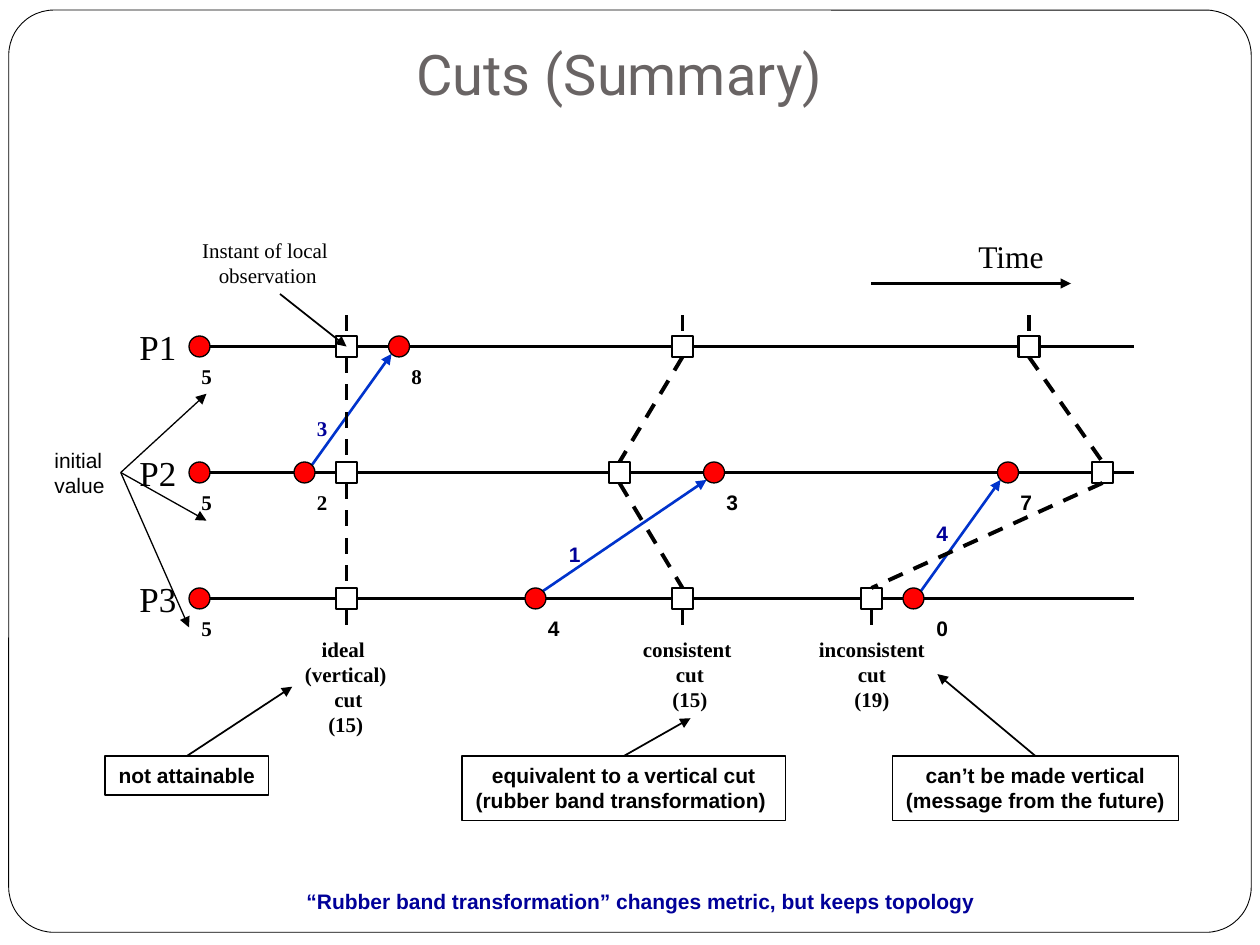
from dataclasses import dataclass
from typing import NamedTuple

from lxml.etree import SubElement
from pptx import Presentation
from pptx.dml.color import RGBColor
from pptx.enum.dml import MSO_LINE_DASH_STYLE as Dash
from pptx.enum.shapes import MSO_CONNECTOR as Connector, MSO_SHAPE as Preset
from pptx.enum.text import MSO_ANCHOR as Anchor, MSO_AUTO_SIZE as AutoSize, PP_ALIGN as Align
from pptx.oxml.ns import qn
from pptx.util import Pt


class Box(NamedTuple):
    left: float
    top: float
    width: float
    height: float


@dataclass(frozen=True)
class Theme:
    ink: RGBColor = RGBColor(0, 0, 0)
    paper: RGBColor = RGBColor(255, 255, 255)
    event: RGBColor = RGBColor(255, 0, 0)
    message: RGBColor = RGBColor(0x00, 0x33, 0xCC)
    accent: RGBColor = RGBColor(0x00, 0x00, 0x99)
    title: RGBColor = RGBColor(0x69, 0x64, 0x64)
    title_font: str = "Roboto"
    serif: str = "Times New Roman"
    sans: str = "Arial"
    title_size: int = 32
    process_size: int = 20
    time_size: int = 18
    body_size: int = 12


THEME = Theme()
MARK = 12
ROW_GAP = 72
FIRST_ROW = 18
GRIP = 4.24  # offset from an event's centre to its edge along the diagonal


def write(shape, text, font, size=THEME.body_size, color=THEME.ink, bold=False, align=Align.LEFT):
    frame = shape.text_frame
    frame.text = text
    for paragraph in frame.paragraphs:
        paragraph.alignment = align
        paragraph.font.name = font
        paragraph.font.size = Pt(size)
        paragraph.font.bold = bold
        paragraph.font.color.rgb = color
    return frame


def add_label(slide, box, text, font=THEME.sans, **style):
    shape = slide.shapes.add_textbox(*map(Pt, box))
    frame = write(shape, text, font, **style)
    frame.word_wrap = False
    frame.auto_size = AutoSize.SHAPE_TO_FIT_TEXT


def add_outline(slide, preset, box, fill=None, width=0.75):
    shape = slide.shapes.add_shape(preset, *map(Pt, box))
    shape.shadow.inherit = False
    if fill is None:
        shape.fill.background()
    else:
        shape.fill.solid()
        shape.fill.fore_color.rgb = fill
    shape.line.color.rgb = THEME.ink
    shape.line.width = Pt(width)
    return shape


def add_line(slide, start, end, width, color=THEME.ink, arrow=False, dashed=False):
    line = slide.shapes.add_connector(Connector.STRAIGHT, *map(Pt, (*start, *end)))
    line.line.color.rgb = color
    line.line.width = Pt(width)
    if dashed:
        line.line.dash_style = Dash.DASH
    if arrow:
        SubElement(line.line._get_or_add_ln(), qn("a:tailEnd"), type="triangle")
    SubElement(line._element.spPr, qn("a:effectLst"))
    return line


def add_mark(slide, preset, center, fill, width):
    x, y = center
    return add_outline(slide, preset, Box(x - MARK / 2, y - MARK / 2, MARK, MARK), fill, width)


def add_frame_and_title(slide, box):
    title = slide.shapes.title
    frame = add_outline(slide, Preset.ROUNDED_RECTANGLE, box, THEME.paper, 0.5)
    frame.adjustments[0] = 0.049
    title._element.addprevious(frame._element)
    title.left, title.top = Pt(box.left + 25), Pt(box.top + 12.24)
    title.width, title.height = Pt(648), Pt(50.4)
    text_frame = write(title, "Cuts (Summary)", THEME.title_font, THEME.title_size,
                       THEME.title, align=Align.CENTER)
    text_frame.vertical_anchor = Anchor.BOTTOM
    text_frame.auto_size = AutoSize.NONE
    text_frame.margin_left = text_frame.margin_right = text_frame.margin_bottom = Pt(7.2)
    text_frame.margin_top = Pt(3.6)


def add_cut(slide, box, centers):
    """Draw a dashed cut from the top to the bottom of the box through one square per process."""
    squares = [add_mark(slide, Preset.RECTANGLE, center, THEME.paper, 1.5) for center in centers]
    stops = [(centers[0][0], box.top), *centers, (centers[-1][0], box.top + box.height)]
    ends = [None, *squares, None]
    for start, end, above, below in zip(stops, stops[1:], ends, ends[1:]):
        line = add_line(slide, start, end, 2.25, dashed=True)
        if above is not None:
            line.begin_connect(above, 2)
        if below is not None:
            line.end_connect(below, 0)


def add_timelines(slide, box):
    def point(x, row):
        return box.left + x, box.top + FIRST_ROW + row * ROW_GAP

    for row in range(3):
        x, y = point(0, row)
        add_line(slide, (x, y), (x + box.width, y), 1.5)
        add_label(slide, Box(x - 35.5, y - 15.8, 37, 31), f"P{row + 1}",
                  THEME.serif, size=THEME.process_size)

    # x and row of sender, x and row of receiver, message value, its place, font
    messages = [((66, 1), (120, 0), "3", (66, 54), THEME.serif),
                ((198, 2), (300, 1), "1", (210, 126), THEME.sans),
                ((414, 2), (468, 1), "4", (420, 114), THEME.sans)]
    for sender, receiver, value, (x, y), font in messages:
        (x1, y1), (x2, y2) = point(*sender), point(*receiver)
        add_line(slide, (x1 + GRIP, y1 - GRIP), (x2 - GRIP, y2 + GRIP), 1.5,
                 THEME.message, arrow=True)
        add_label(slide, Box(box.left + x, box.top + y, 20.8, 21.6), value, font,
                  color=THEME.accent, bold=True)

    for xs in [(90, 90, 90), (282, 246, 282), (480, 522, 390)]:
        add_cut(slide, box, [point(x, row) for row, x in enumerate(xs)])

    # x and row of event, left of its value, value, font
    events = [(6, row, 0, "5", THEME.serif) for row in range(3)]
    events += [(66, 1, 66, "2", THEME.serif), (120, 0, 120, "8", THEME.serif),
               (198, 2, 198, "4", THEME.sans), (300, 1, 300, "3", THEME.sans),
               (414, 2, 420, "0", THEME.sans), (468, 1, 468, "7", THEME.sans)]
    for x, row, left, value, font in events:
        center = point(x, row)
        add_mark(slide, Preset.OVAL, center, THEME.event, 0.75)
        add_label(slide, Box(box.left + left, center[1] + 6, 20.8, 21.6), value, font, bold=True)


def add_time_arrow(slide, box):
    bottom = box.top + box.height
    add_label(slide, Box(box.left + 54, box.top, 52.6, 29), "Time", THEME.serif,
              size=THEME.time_size)
    add_line(slide, (box.left, bottom), (box.left + box.width, bottom), 1.5, arrow=True)


def add_observation_note(slide, box):
    add_label(slide, box, "Instant of local \nobservation", THEME.serif, align=Align.CENTER)
    bottom = box.top + box.height
    add_line(slide, (box.left + 52, bottom), (box.left + box.width, bottom + 30), 1, arrow=True)


def add_initial_value_note(slide, box):
    add_label(slide, box, "initial\nvalue")
    start = box.left + box.width, box.top + box.height / 2
    for dx, dy in [(49, 27.5), (39, 88.5), (49, -45)]:
        add_line(slide, start, (start[0] + dx, start[1] + dy), 0.75, arrow=True)


def add_cut_remarks(slide, box):
    # cut name, its left, width and height; remark, its left, width and height; arrow tip
    remarks = [
        ("ideal \n(vertical)\n cut\n(15)", (107, 61.2, 64.8),
         "not attainable", (0, 93.6, 22.3), (107, 32.4)),
        ("consistent \ncut\n(15)", (300, 68.4, 50.4),
         "equivalent to a vertical cut\n(rubber band transformation) ", (204, 185, 36.7),
         (334.6, 50.4)),
        ("inconsistent\ncut\n(19)", (400.8, 74.9, 50.4),
         "can’t be made vertical\n(message from the future)", (450, 163.4, 36.7),
         (475.7, 25.2)),
    ]
    for name, (x, width, height), remark, (left, wide, high), tip in remarks:
        add_label(slide, Box(box.left + x, box.top, width, height), name, THEME.serif,
                  bold=True, align=Align.CENTER)
        top = box.top + 72
        shape = add_outline(slide, Preset.RECTANGLE, Box(box.left + left, top, wide, high))
        frame = write(shape, remark, THEME.sans, bold=True, align=Align.CENTER)
        frame.word_wrap = False
        frame.vertical_anchor = Anchor.TOP
        arrow = add_line(slide, (box.left + left + wide / 2, top),
                         (box.left + tip[0], box.top + tip[1]), 1, arrow=True)
        arrow.begin_connect(shape, 0)


def main():
    presentation = Presentation()
    presentation.slide_width, presentation.slide_height = Pt(720), Pt(540)
    slide = presentation.slides.add_slide(presentation.slide_layouts[5])
    add_frame_and_title(slide, Box(5, 5.76, 710, 527))
    add_timelines(slide, Box(108, 180, 540, 180))
    add_time_arrow(slide, Box(498, 132, 114, 30))
    add_observation_note(slide, Box(108, 132, 90, 36))
    add_initial_value_note(slide, Box(24, 252, 45, 36))
    add_cut_remarks(slide, Box(60, 360, 613.4, 108.7))
    add_label(slide, Box(168, 504, 396.7, 21.6),
              "“Rubber band transformation” changes metric, but keeps topology",
              color=THEME.accent, bold=True)
    presentation.save("out.pptx")


if __name__ == "__main__":
    main()
